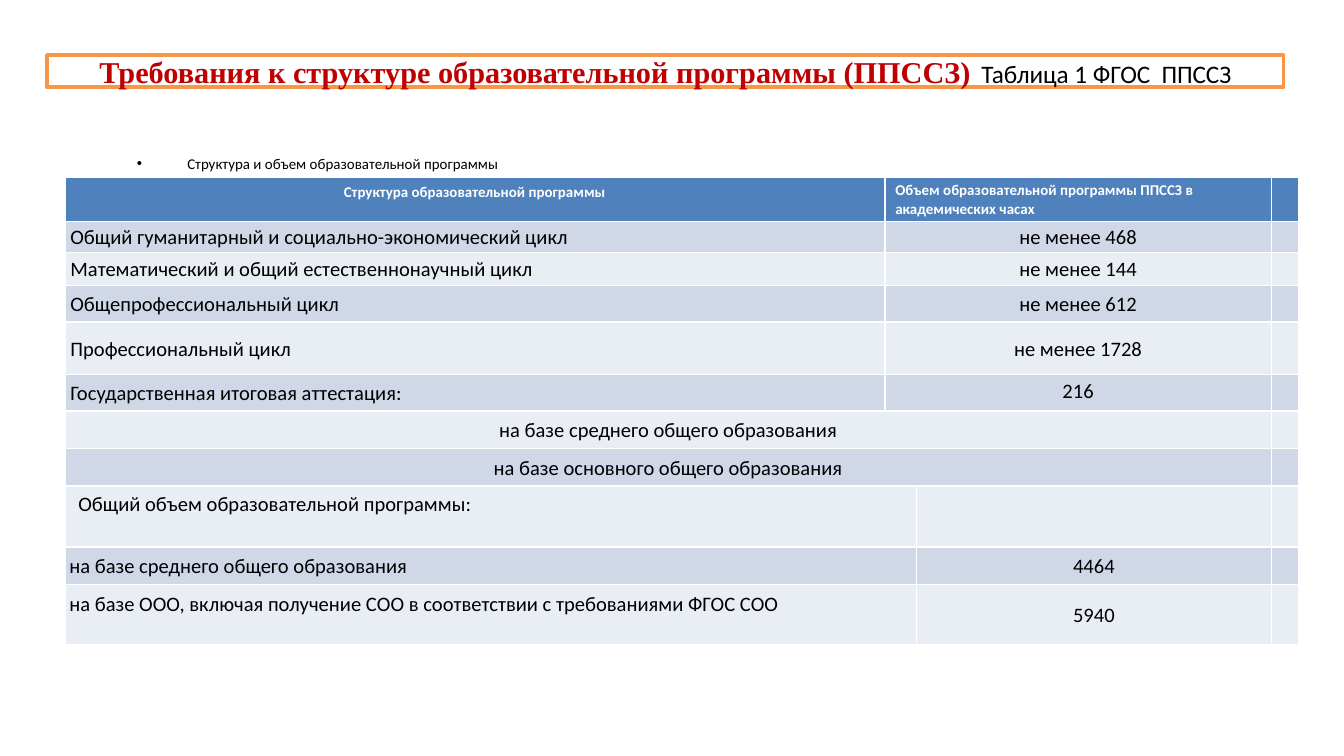
import pptx
import pptx.dml.color
import pptx.enum.text
import pptx.oxml.ns
import pptx.util
from lxml import etree

Cm = pptx.util.Cm
Pt = pptx.util.Pt
LEFT = pptx.enum.text.PP_ALIGN.LEFT
CENTER = pptx.enum.text.PP_ALIGN.CENTER
TOP = pptx.enum.text.MSO_ANCHOR.TOP
MIDDLE = pptx.enum.text.MSO_ANCHOR.MIDDLE

TITLE = [
    ("Требования к структуре образовательной программы (ППССЗ)", "Times New Roman", 16.2, "C00000", True),
    ("  Таблица 1 ФГОС  ППССЗ", "Calibri", 13.5, "000000", False),
]
SUBTITLE = "Структура и объем образовательной программы"

HEADER_COLOR = "4F81BD"
BAND_COLORS = ("E9EDF4", "D0D8E8")
COLUMN_WIDTHS = (15.49, 0.46, 6.71, 0.51)

CELL_FORMATS = {
    "header": {"align": CENTER, "anchor": TOP, "margins": (0.2, 0.08), "spacing": 1.07},
    "header_plain": {"align": LEFT, "anchor": TOP, "margins": (0.2, 0.08), "spacing": 1},
    "name": {"align": LEFT, "anchor": MIDDLE, "margins": (0.1, 0), "spacing": 1.07},
    "hours": {"align": CENTER, "anchor": MIDDLE, "margins": (0.1, 0), "spacing": 1.07},
    "hours_top": {"align": CENTER, "anchor": TOP, "margins": (0.2, 0.08), "spacing": 1},
    "basis": {"align": CENTER, "anchor": TOP, "margins": (0.08, 0.1), "spacing": 1.07},
    "total": {"align": LEFT, "anchor": TOP, "margins": (0.25, 0.1), "spacing": 1},
    "total_name": {"align": LEFT, "anchor": TOP, "margins": (0.08, 0.1), "spacing": 1.07},
}

# height, then cells as (text, format name, first column, column span)
ROWS = [
    (0.84, [("Структура образовательной программы", "header", 0, 1),
            ("Объем образовательной программы ППССЗ в академических часах", "header_plain", 1, 2)]),
    (0.58, [("Общий гуманитарный и социально-экономический цикл", "name", 0, 1),
            ("не менее 468", "hours", 1, 2)]),
    (0.63, [("Математический и общий естественнонаучный цикл", "name", 0, 1),
            ("не менее 144", "hours", 1, 2)]),
    (0.69, [("Общепрофессиональный цикл", "name", 0, 1), ("не менее 612", "hours", 1, 2)]),
    (0.99, [("Профессиональный цикл", "name", 0, 1), ("не менее 1728", "hours", 1, 2)]),
    (0.69, [("Государственная итоговая аттестация:", "name", 0, 1), ("216", "hours_top", 1, 2)]),
    (0.71, [("на базе среднего общего образования", "basis", 0, 3)]),
    (0.71, [("на базе основного общего образования", "basis", 0, 3)]),
    (1.15, [("Общий объем образовательной программы:", "total", 0, 2)]),
    (0.71, [("на базе среднего общего образования", "total_name", 0, 2), ("4464", "hours", 2, 1)]),
    (1.15, [("на базе ООО, включая получение СОО в соответствии с требованиями ФГОС СОО", "total_name", 0, 2),
            ("5940", "hours", 2, 1)]),
]


def color(value):
    return pptx.dml.color.RGBColor.from_string(value)


def set_attributes(target, values):
    for name, value in values.items():
        setattr(target, name, value)


def add_run(paragraph, text, font_name, size, font_color, bold=False):
    run = paragraph.add_run()
    run.text = text
    set_attributes(run.font, {"name": font_name, "size": Pt(size), "bold": bold})
    run.font.color.rgb = color(font_color)


def set_margins(target, horizontal, vertical):
    set_attributes(target, {
        "margin_left": Cm(horizontal), "margin_right": Cm(horizontal),
        "margin_top": Cm(vertical), "margin_bottom": Cm(vertical),
    })


def add_title(slide):
    shape = slide.shapes.add_shape(1, Cm(0.89), Cm(1.04), Cm(23.37), Cm(0.61))
    shape.shadow.inherit = False
    shape.fill.solid()
    shape.fill.fore_color.rgb = color("FFFFFF")
    shape.line.color.rgb = color("F79646")
    shape.line.width = Pt(2)
    set_margins(shape.text_frame, 0.25, 0)
    set_attributes(shape.text_frame, {"word_wrap": True, "vertical_anchor": MIDDLE})
    paragraph = shape.text_frame.paragraphs[0]
    paragraph.alignment = CENTER
    for run in TITLE:
        add_run(paragraph, *run)


def add_subtitle(slide):
    shape = slide.shapes.add_textbox(Cm(2.34), Cm(2.79), Cm(21.29), Cm(0.56))
    shape.text_frame.word_wrap = True
    paragraph = shape.text_frame.paragraphs[0]
    paragraph.space_before = Pt(1.6)
    add_run(paragraph, SUBTITLE, "Calibri", 8, "000000")
    properties = paragraph._p.get_or_add_pPr()
    properties.set("marL", str(Cm(0.95)))
    properties.set("indent", str(-Cm(0.95)))
    etree.SubElement(properties, pptx.oxml.ns.qn("a:buFont")).set("typeface", "Arial")
    etree.SubElement(properties, pptx.oxml.ns.qn("a:buChar")).set("char", "•")


def fill_cell(cell, text, format_name, size, font_color, bold):
    cell_format = CELL_FORMATS[format_name]
    set_margins(cell, *cell_format["margins"])
    cell.vertical_anchor = cell_format["anchor"]
    paragraph = cell.text_frame.paragraphs[0]
    set_attributes(paragraph, {"alignment": cell_format["align"], "line_spacing": cell_format["spacing"]})
    add_run(paragraph, text, "Calibri", size, font_color, bold)


def add_table(slide):
    heights = [height for height, cells in ROWS]
    table = slide.shapes.add_table(
        len(ROWS), len(COLUMN_WIDTHS), Cm(1.23), Cm(3.35), Cm(sum(COLUMN_WIDTHS)), Cm(sum(heights))
    ).table
    for column, width in zip(table.columns, COLUMN_WIDTHS):
        column.width = Cm(width)
    for row_index, (height, cells) in enumerate(ROWS):
        is_header = row_index == 0
        table.rows[row_index].height = Cm(height)
        for cell in table.rows[row_index].cells:
            cell.fill.solid()
            cell.fill.fore_color.rgb = color(HEADER_COLOR if is_header else BAND_COLORS[row_index % 2])
            set_margins(cell, 0.1, 0)
            paragraph = cell.text_frame.paragraphs[0]
            etree.SubElement(paragraph._p, pptx.oxml.ns.qn("a:endParaRPr")).set("sz", "800")
        for text, format_name, first, span in cells:
            cell = table.cell(row_index, first)
            if span > 1:
                cell.merge(table.cell(row_index, first + span - 1))
            style = (8, "FFFFFF", True) if is_header else (11, "000000", False)
            fill_cell(cell, text, format_name, *style)


def main():
    presentation = pptx.Presentation()
    set_attributes(presentation, {"slide_width": Cm(25.4), "slide_height": Cm(14.29)})
    slide = presentation.slides.add_slide(presentation.slide_layouts[6])
    add_title(slide)
    add_subtitle(slide)
    add_table(slide)
    presentation.save("out.pptx")


if __name__ == "__main__":
    main()
